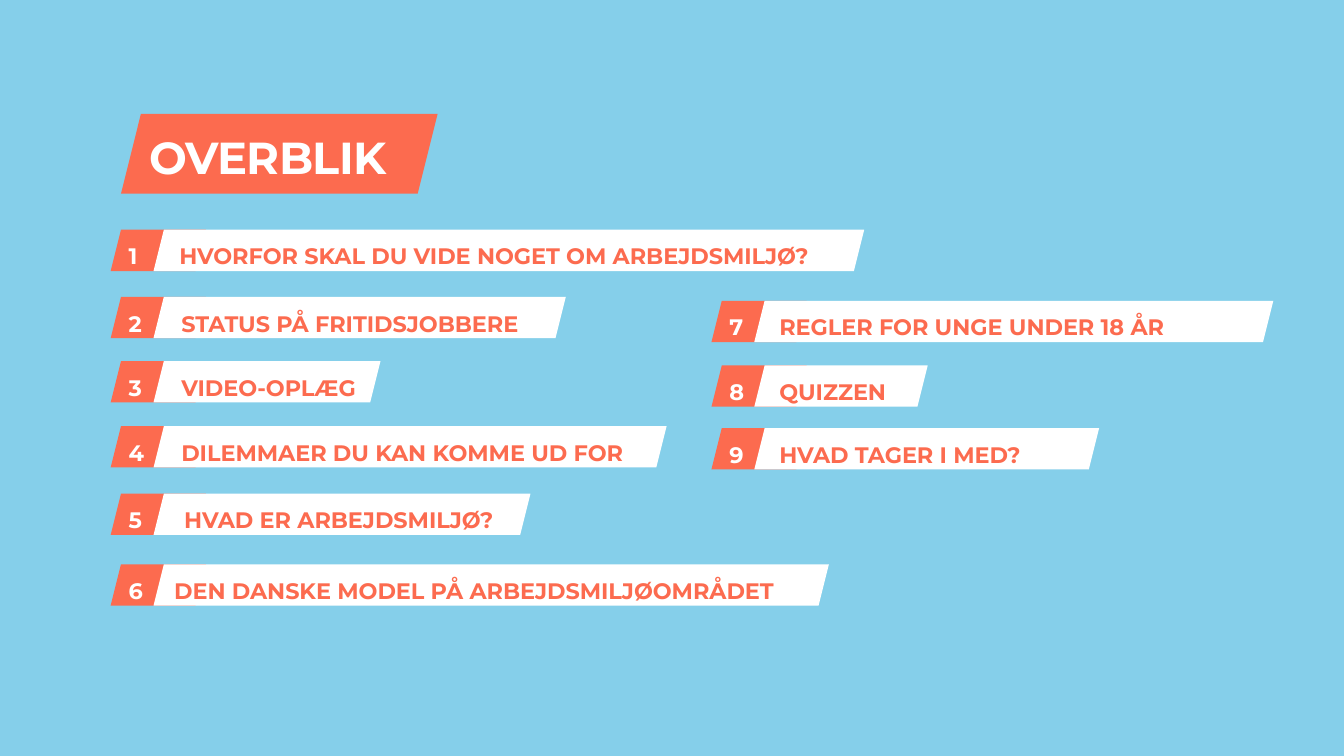
"""Build the overview slide: a title tab and nine numbered topic bars."""
from dataclasses import dataclass

from pptx import Presentation
from pptx.dml.color import RGBColor
from pptx.enum.shapes import MSO_SHAPE as Shape
from pptx.enum.text import MSO_ANCHOR as Anchor, MSO_AUTO_SIZE as Fit, PP_ALIGN as Align
from pptx.shapes.autoshape import Shape as Auto
from pptx.slide import Slide
from pptx.text.text import TextFrame as Frame
from pptx.util import Cm, Pt

SKY = RGBColor(0x85, 0xCF, 0xEA)
CORAL = RGBColor(0xFC, 0x6B, 0x4F)
WHITE = RGBColor(0xFF, 0xFF, 0xFF)
FACE = "Montserrat"
LEFT, RIGHT = 2.79, 17.93
HIGH = 1.04
RISE = 0.14


@dataclass(frozen=True)
class Topic:
    """One numbered bar, in centimetres."""
    text: str
    x: float
    y: float
    width: float
    indent: float


TOPICS = [
    Topic("HVORFOR SKAL DU VIDE NOGET OM ARBEJDSMILJØ?", LEFT, 5.79, 17.91, 1.48),
    Topic("STATUS PÅ FRITIDSJOBBERE", LEFT, 7.48, 10.39, 1.53),
    Topic("VIDEO-OPLÆG", LEFT, 9.1, 5.72, 1.53),
    Topic("DILEMMAER DU KAN KOMME UD FOR", LEFT, 10.74, 12.93, 1.53),
    Topic("HVAD ER ARBEJDSMILJØ?", LEFT, 12.44, 9.5, 1.6),
    Topic("DEN DANSKE MODEL PÅ ARBEJDSMILJØOMRÅDET", LEFT, 14.22, 17.02, 1.35),
    Topic("REGLER FOR UNGE UNDER 18 ÅR", RIGHT, 7.58, 13.08, 1.46),
    Topic("QUIZZEN", RIGHT, 9.21, 4.37, 1.46),
    Topic("HVAD TAGER I MED?", RIGHT, 10.79, 8.69, 1.46),
]


def add_slant(slide: Slide, x: float, y: float, width: float, height: float,
              color: RGBColor) -> Auto:
    """Add a plain slanted bar."""
    bar = slide.shapes.add_shape(Shape.PARALLELOGRAM, Cm(x), Cm(y), Cm(width), Cm(height))
    bar.shadow.inherit = False
    bar.fill.solid()
    bar.fill.fore_color.rgb = color
    bar.line.fill.background()
    return bar


def write(frame: Frame, text: str, size: int, space: float, color: RGBColor) -> None:
    """Write one line of bold text, aligned left."""
    frame.word_wrap = True
    line = frame.paragraphs[0]
    line.text = text
    line.alignment = Align.LEFT
    line.line_spacing = space
    font = line.font
    font.name, font.size, font.bold = FACE, Pt(size), True
    font.color.rgb = color


def add_label(slide: Slide, text: str, x: float, y: float, width: float,
              color: RGBColor) -> None:
    """Add a text box with one label."""
    box = slide.shapes.add_textbox(Cm(x), Cm(y), Cm(width), Cm(1.37))
    write(box.text_frame, text, 16, 1.5, color)


def add_title(slide: Slide) -> None:
    """Fill the title and put its tab behind it."""
    title = slide.shapes.title
    title.left, title.top, title.width, title.height = Cm(3.51), Cm(2.74), Cm(12.17), Cm(2.01)
    tab = add_slant(slide, 3.05, 2.87, 7.98, 2.01, CORAL)
    title.element.addprevious(tab.element)
    frame = title.text_frame
    frame.auto_size = Fit.NONE
    frame.vertical_anchor = Anchor.BOTTOM
    write(frame, "OVERBLIK", 32, 0.85, WHITE)
    frame.paragraphs[0].runs[0]._r.get_or_add_rPr().set("spc", "-50")


def add_topic(slide: Slide, number: int, topic: Topic) -> None:
    """Add a number tab, its bar and both texts."""
    add_slant(slide, topic.x, topic.y, 2.4, HIGH, CORAL)
    add_slant(slide, topic.x + 1.08, topic.y, topic.width, HIGH, WHITE)
    top = topic.y - RISE
    add_label(slide, topic.text, topic.x + topic.indent, top, topic.width - 0.4, CORAL)
    add_label(slide, str(number), topic.x + 0.2, top, 1.19, WHITE)


def main() -> None:
    """Create and save the deck."""
    deck = Presentation()
    deck.slide_width, deck.slide_height = Cm(33.87), Cm(19.05)
    slide = deck.slides.add_slide(deck.slide_layouts[5])
    back = slide.background.fill
    back.solid()
    back.fore_color.rgb = SKY
    add_title(slide)
    for number, topic in enumerate(TOPICS, 1):
        add_topic(slide, number, topic)
    deck.save("out.pptx")


if __name__ == "__main__":
    main()
